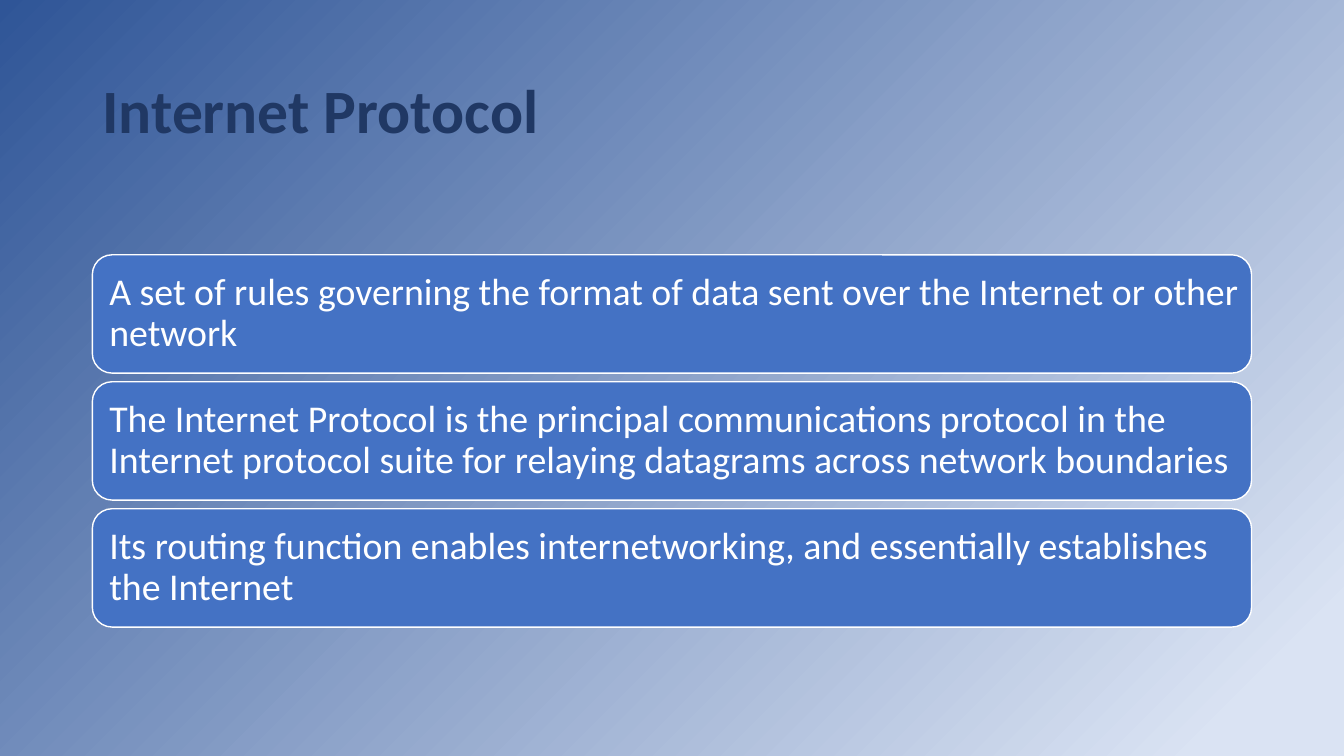
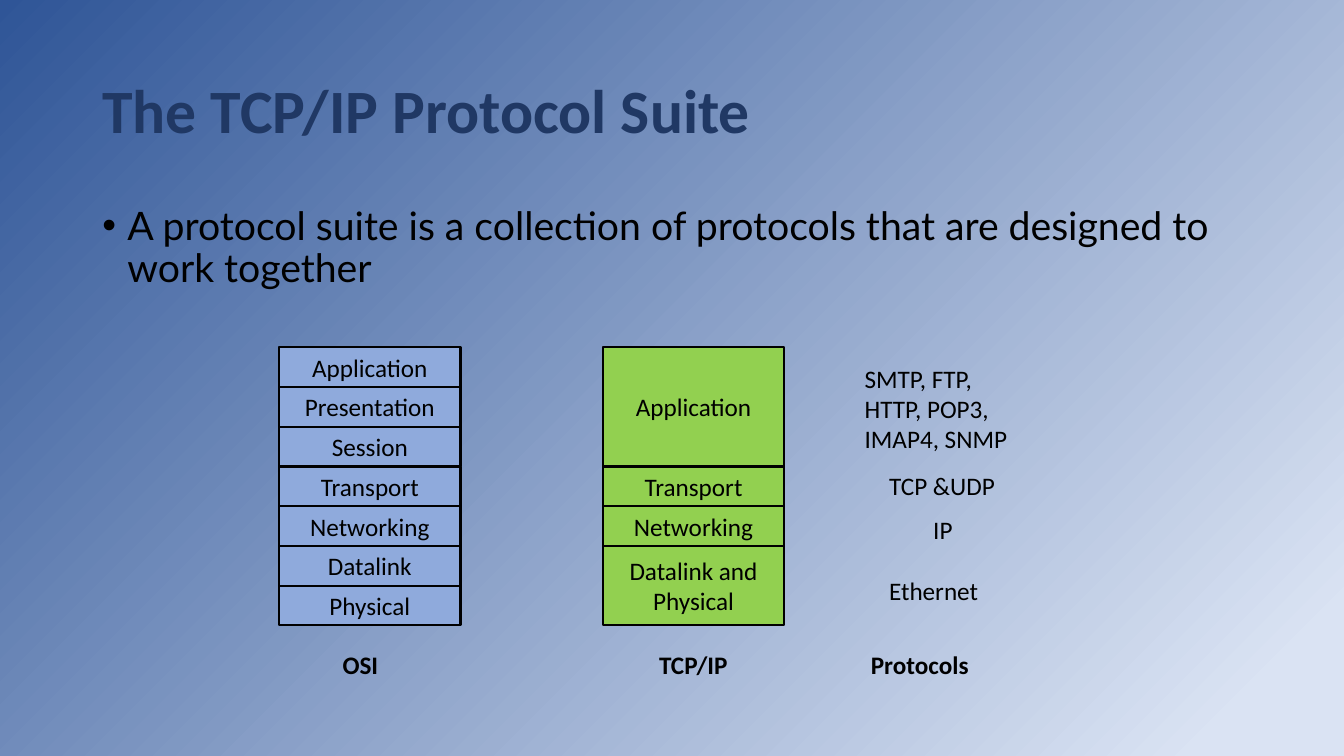
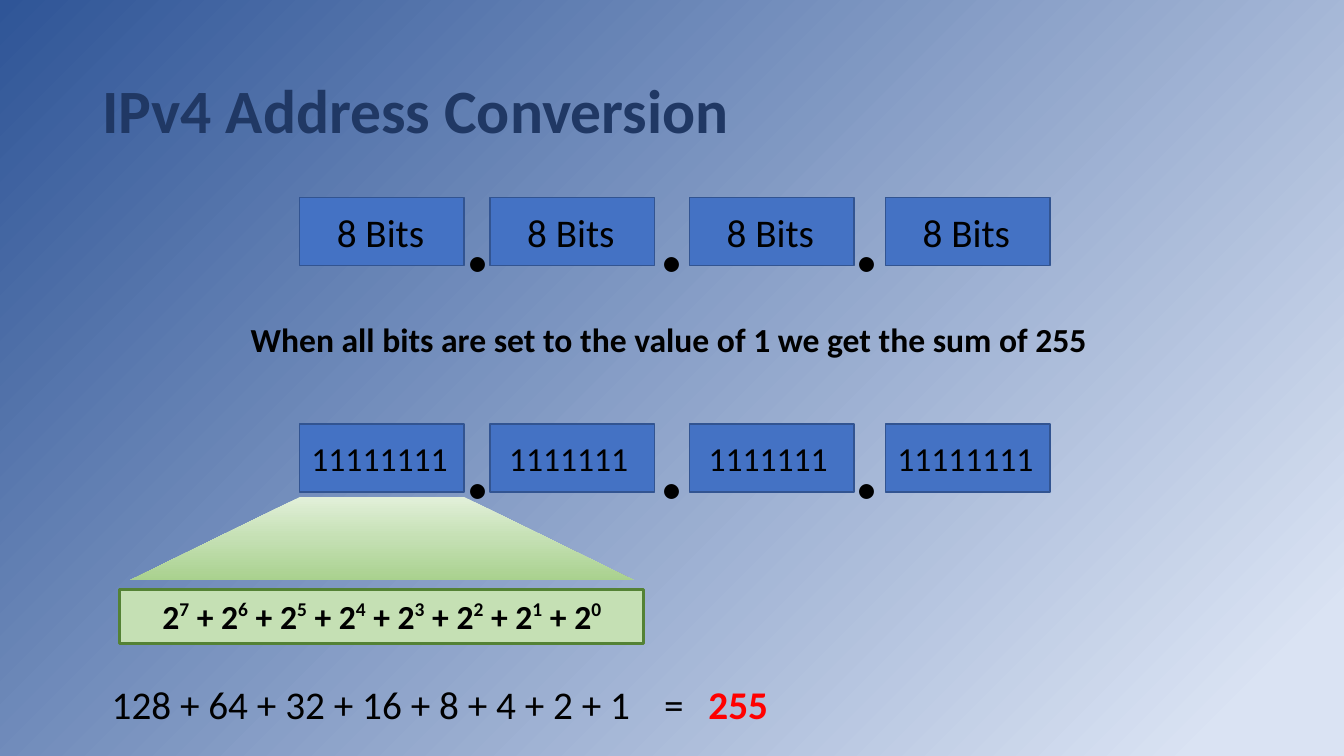
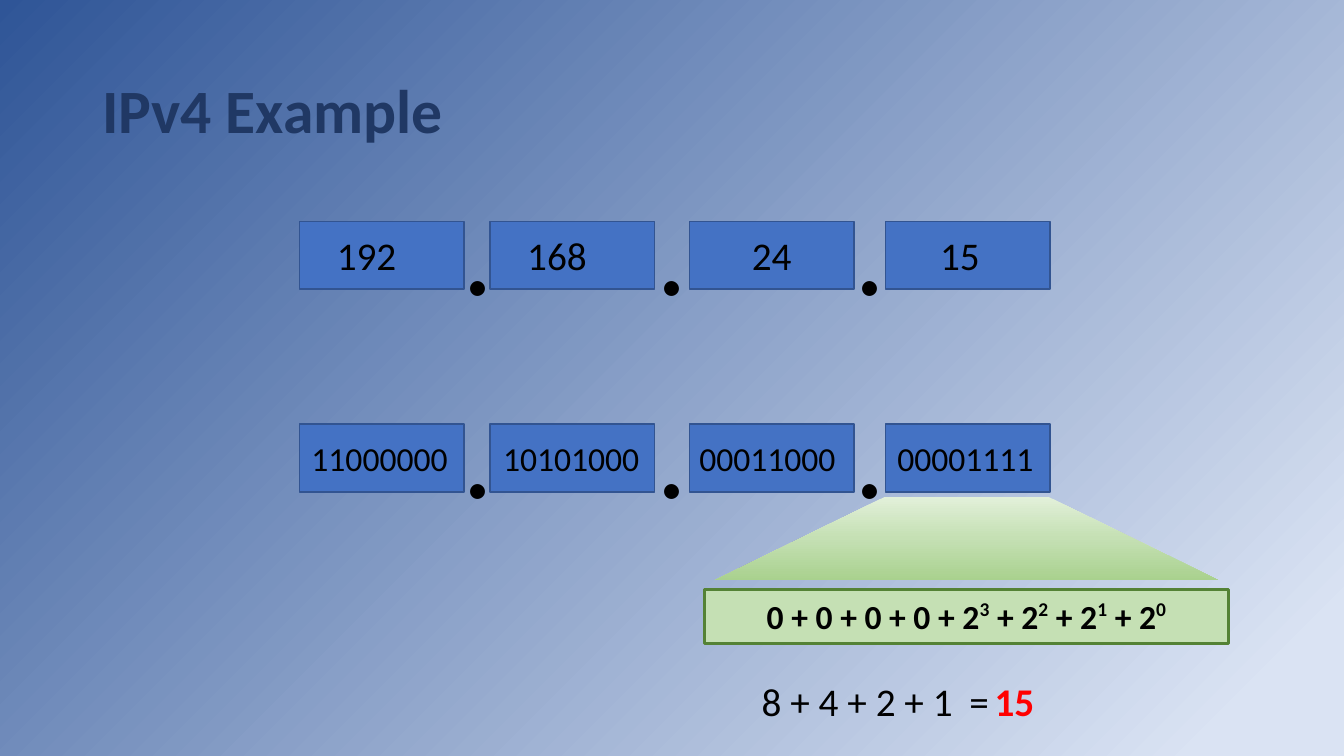
"""Build four slides about the Internet Protocol."""
from copy import deepcopy

from lxml.etree import SubElement
from pptx import Presentation
from pptx.dml.color import RGBColor
from pptx.enum.shapes import MSO_SHAPE as SHAPE
from pptx.enum.text import MSO_ANCHOR as ANCHOR, MSO_AUTO_SIZE as AUTO, PP_ALIGN as ALIGN
from pptx.oxml.ns import qn
from pptx.util import Pt

FONT, BODY_FONT = "Calibri", "Lato"
BLACK, WHITE, NAVY, RED = "000000", "FFFFFF", "203864", "FF0000"
BLUE, BLUE_EDGE, PALE_BLUE, LIME = "4472C4", "325491", "8FAADC", "92D050"
PALE_GREEN, GREEN_EDGE = "C5E0B4", "548235"
BACKGROUND = [(0, "2F5597"), (0.93, "DAE3F3")]
BEAM = [(0, "E2F0D9"), (0.49, PALE_GREEN), (1, "A9D18E")]
CELL_LEFTS = [0, 136, 278.5, 418.5]


def rgb(value):
    """Turn a hex string into a colour."""
    return RGBColor.from_string(value)


def box(left, top, width, height):
    """Turn a box in points into lengths."""
    return Pt(left), Pt(top), Pt(width), Pt(height)


def gradient(owner, fill, stops, angle):
    """Give the owner's fill a linear gradient."""
    fill.gradient()
    fill.gradient_angle = angle
    gs_list = owner.element.find(".//" + qn("a:gsLst"))
    for _ in stops[2:]:
        gs_list.append(deepcopy(gs_list[0]))
    for stop, (position, color) in zip(fill.gradient_stops, stops):
        stop.position = position
        stop.color.rgb = rgb(color)


def write(tf, text, size, color=BLACK, bold=False, font=FONT, align=ALIGN.LEFT, spacing=1):
    """Fill the first paragraph; text between carets is superscript."""
    tf.word_wrap = True
    p = tf.paragraphs[0]
    p.alignment, p.line_spacing = align, spacing
    for i, part in enumerate(text.split("^")):
        if not part:
            continue
        r = p.add_run()
        r.text = part
        r.font.name, r.font.size, r.font.bold = font, Pt(size), bold
        r.font.color.rgb = rgb(color)
        if i % 2:
            r._r.get_or_add_rPr().set("baseline", "40000")
    return p


def label(s, left, top, width, height, text, size, **style):
    """Place a text box and return its paragraph."""
    tf = s.shapes.add_textbox(*box(left, top, width, height)).text_frame
    tf.margin_right = 0
    return write(tf, text, size, **style)


def block(s, kind, left, top, width, height, fill, edge, weight):
    """Place a filled and outlined shape."""
    sp = s.shapes.add_shape(kind, *box(left, top, width, height))
    sp.shadow.inherit = False
    sp.fill.solid()
    sp.fill.fore_color.rgb = rgb(fill)
    sp.line.color.rgb = rgb(edge)
    sp.line.width = Pt(weight)
    sp.text_frame.vertical_anchor = ANCHOR.MIDDLE
    return sp


def titled_slide(prs, title):
    """Add a slide with the shared title style."""
    s = prs.slides.add_slide(prs.slide_layouts[5])
    sp = s.shapes.title
    sp.left, sp.top, sp.width, sp.height = box(66, 28.8, 828, 104.4)
    sp.text_frame.auto_size = AUTO.NONE
    sp.text_frame.vertical_anchor = ANCHOR.MIDDLE
    write(sp.text_frame, title, 44, NAVY, True, spacing=0.9)
    return s


def statement_bars(s, left, top, width, height, gap, statements):
    """Stack rounded bars with one statement each."""
    for i, text in enumerate(statements):
        sp = block(s, SHAPE.ROUNDED_RECTANGLE, left, top + i * (height + gap),
                   width, height, BLUE, WHITE, 1)
        sp.text_frame.margin_left, sp.text_frame.margin_right = Pt(8), Pt(4)
        write(sp.text_frame, text, 27, WHITE, spacing=0.9)


def bullet(s, left, top, width, height, text):
    """Place a bulleted paragraph."""
    p = label(s, left, top, width, height, text, 28, font=BODY_FONT, spacing=0.9)
    p.space_before = Pt(10)
    pPr = p._p.get_or_add_pPr()
    pPr.set("marL", str(Pt(18)))
    pPr.set("indent", str(-Pt(18)))
    SubElement(pPr, qn("a:buFont"), typeface="Arial")
    SubElement(pPr, qn("a:buChar"), char="•")


def layer_stack(s, left, top, width, unit, fill, layers):
    """Stack layers, each as many units high as its span."""
    for text, span in layers:
        sp = block(s, SHAPE.RECTANGLE, left, top, width, unit * span, fill, BLACK, 1.5)
        tf = sp.text_frame
        tf.margin_top = tf.margin_bottom = 0
        write(tf, text, 18, align=ALIGN.CENTER)
        top += unit * span


def address_row(s, left, top, size, octets, last_dot):
    """Place four octets, given as text and left inset, with dots between."""
    for offset, (text, inset) in zip(CELL_LEFTS, octets):
        sp = block(s, SHAPE.RECTANGLE, left + offset, top, 117.5, 48.5, BLUE, BLUE_EDGE, 1)
        sp.text_frame.margin_left, sp.text_frame.margin_right = Pt(inset), 0
        write(sp.text_frame, text, size)
    for offset in (109.3, 248.2, last_dot):
        label(s, left + offset, top - 38.5, 37, 114, ".", 88)


def power_sum(s, left, top, text):
    """Place a beam that widens onto a box with a sum of powers."""
    sp = block(s, SHAPE.RECTANGLE, left, top + 66.2, 374, 38.2, PALE_GREEN, GREEN_EDGE, 2.25)
    write(sp.text_frame, text, 24, bold=True, align=ALIGN.CENTER)
    beam = s.shapes.add_shape(SHAPE.TRAPEZOID, *box(left + 7.2, top, 360, 59.5))
    beam.shadow.inherit = False
    beam.adjustments[0] = 2.04
    beam.line.fill.background()
    gradient(beam, beam.fill, BEAM, 270)


def result_line(s, top, terms, equals_left, result_left, result):
    """Place the terms, the equals sign and the red result."""
    left, width, text = terms
    label(s, left, top, width, 41, text, 28)
    label(s, equals_left, top, 29, 41, "=", 28)
    label(s, result_left, top, 58, 41, result, 28, color=RED, bold=True)


def protocol_slide(prs):
    """Build the definition slide."""
    s = titled_slide(prs, "Internet Protocol")
    statement_bars(s, 66, 182, 828, 84.5, 6.2, [
        "A set of rules governing the format of data sent over the Internet or other network",
        "The Internet Protocol is the principal communications protocol in the Internet "
        "protocol suite for relaying datagrams across network boundaries",
        "Its routing function enables internetworking, and essentially establishes the Internet",
    ])


def suite_slide(prs):
    """Build the slide that compares layers."""
    s = titled_slide(prs, "The TCP/IP Protocol Suite")
    bullet(s, 66, 144, 828, 70,
           "A protocol suite is a collection of protocols that are designed to work together")
    osi = ["Application", "Presentation", "Session", "Transport",
           "Networking", "Datalink", "Physical"]
    layer_stack(s, 199.4, 248, 129.6, 28.4, PALE_BLUE, [(name, 1) for name in osi])
    layer_stack(s, 430.6, 248, 129.6, 28.4, LIME, [
        ("Application", 3), ("Transport", 1), ("Networking", 1), ("Datalink and Physical", 2)])
    for left, top, width, height, text in [
            (610.5, 255.6, 120, 73, "SMTP, FTP, HTTP, POP3, IMAP4, SNMP"),
            (628, 332.6, 95, 29, "TCP &UDP"),
            (659.5, 363.6, 32, 29, "IP"),
            (628, 407.5, 95, 29, "Ethernet")]:
        label(s, left, top, width, height, text, 18)
    for left, text in [(237.6, "OSI"), (463.7, "TCP/IP"), (614.9, "Protocols")]:
        label(s, left, 460, 85, 29, text, 18, bold=True)


def conversion_slide(prs):
    """Build the conversion slide."""
    s = titled_slide(prs, "IPv4 Address Conversion")
    address_row(s, 214, 141, 28, [("8 Bits", 26.6)] * 4, 387.2)
    label(s, 172, 224, 618, 36,
          "When all bits are set to the value of 1 we get the sum of 255", 24, bold=True)
    address_row(s, 214, 303, 24, [("11111111", 8.5), ("1111111", 13.7),
                                  ("1111111", 13.7), ("11111111", 8.5)], 387.2)
    power_sum(s, 85.7, 355, " + ".join(f"2^{n}^" for n in range(7, -1, -1)))
    result_line(s, 482.4, (72.7, 397, "128 + 64 + 32 + 16 + 8 + 4 + 2 + 1"), 467.3, 499, "255")


def example_slide(prs):
    """Build the worked example slide."""
    s = titled_slide(prs, "IPv4 Example")
    address_row(s, 214, 158, 28, [("192", 26.6), ("168", 26.6), ("24", 44.6), ("15", 39)], 389.4)
    address_row(s, 214, 303, 24, [("11000000", 8.5), ("10101000", 9.4),
                                  ("00011000", 7.2), ("00001111", 8.5)], 389.4)
    power_sum(s, 503.3, 355, " + ".join(["0"] * 4 + [f"2^{n}^" for n in range(3, -1, -1)]))
    result_line(s, 480.2, (537, 153, "8 + 4 + 2 + 1"), 685.4, 703.4, "15")


def main():
    """Build and save the presentation."""
    prs = Presentation()
    prs.slide_width, prs.slide_height = Pt(960), Pt(540)
    master = prs.slide_master
    gradient(master, master.background.fill, BACKGROUND, 315)
    for build in (protocol_slide, suite_slide, conversion_slide, example_slide):
        build(prs)
    prs.save("out.pptx")


if __name__ == "__main__":
    main()
